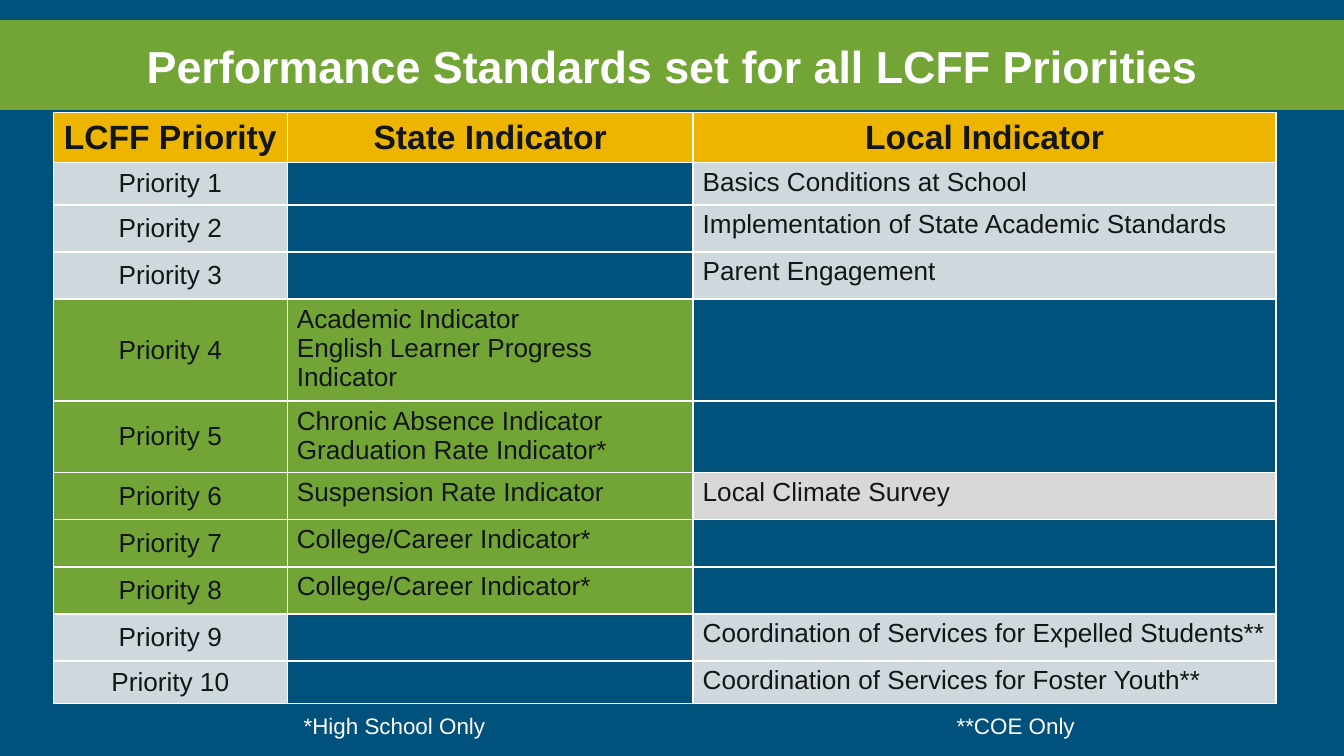
from lxml.etree import SubElement
from pptx import Presentation
from pptx.dml.color import RGBColor
from pptx.enum.text import MSO_ANCHOR as Anchor, PP_ALIGN as Align
from pptx.oxml.ns import qn
from pptx.util import Cm, Pt

NAVY, GREEN, GOLD = "00517C", "72A436", "EEB500"
MIST, GREY, INK, WHITE = "CFD8DC", "D8D8D8", "121618", "FFFFFF"

HEADINGS = ("LCFF Priority", "State Indicator", "Local Indicator")
INDICATORS = [
    ("", "Basics Conditions at School"),
    ("", "Implementation of State Academic Standards"),
    ("", "Parent Engagement"),
    ("Academic Indicator\nEnglish Learner Progress Indicator", ""),
    ("Chronic Absence Indicator\nGraduation Rate Indicator*", ""),
    ("Suspension Rate Indicator", "Local Climate Survey"),
    ("College/Career Indicator*", ""),
    ("College/Career Indicator*", ""),
    ("", "Coordination of Services for Expelled Students**"),
    ("", "Coordination of Services for Foster Youth**"),
]
COLUMN_WIDTHS = (4.42, 7.67, 11.02)
ROW_HEIGHTS = (0.94, 0.79, 0.89, 0.89, 1.93, 1.35, 0.89, 0.89, 0.89, 0.89, 0.79)


def paint(fill, colour):
    """Give a fill one solid colour."""
    fill.solid()
    fill.fore_color.rgb = RGBColor.from_string(colour)


def format_text(frame, size, colour, bold=False, align=Align.LEFT):
    """Format every paragraph and run of a text frame."""
    for paragraph in frame.paragraphs:
        paragraph.alignment = align
        for run in paragraph.runs:
            run.font.name = "Arial"
            run.font.size = Pt(size)
            run.font.bold = bold
            run.font.color.rgb = RGBColor.from_string(colour)


def add_borders(cell, colour):
    """Draw a one-point line on all four sides of a cell."""
    properties = cell._tc.get_or_add_tcPr()
    for side in ("a:lnL", "a:lnR", "a:lnT", "a:lnB"):
        line = SubElement(properties, qn(side), w=str(Pt(1)))
        solid = SubElement(line, qn("a:solidFill"))
        SubElement(solid, qn("a:srgbClr"), val=colour)


def fill_cell(cell, text, colour, size=14, bold=False, centred=False):
    """Write one table cell; a cell without text shows the background."""
    cell.margin_left = cell.margin_right = Cm(0.18)
    cell.margin_top = cell.margin_bottom = Cm(0.1)
    add_borders(cell, WHITE)
    if not text:
        cell.fill.background()
        paragraph = cell.text_frame.paragraphs[0]
        SubElement(paragraph._p, qn("a:endParaRPr"), sz=str(size * 100))
        return
    paint(cell.fill, colour)
    cell.text_frame.text = text
    cell.vertical_anchor = Anchor.MIDDLE if centred else Anchor.TOP
    format_text(cell.text_frame, size, INK, bold,
                Align.CENTER if centred else Align.LEFT)


def add_title_band(slide, left, top, width, height):
    """Turn the title placeholder into the green band."""
    title = slide.shapes.title
    title.left, title.top, title.width, title.height = left, top, width, height
    paint(title.fill, GREEN)
    title.text_frame.text = "Performance Standards set for all LCFF Priorities"
    title.text_frame.vertical_anchor = Anchor.MIDDLE
    format_text(title.text_frame, 24, WHITE, True, Align.CENTER)


def add_priority_table(slide, left, top, width, height):
    """Add the table of state and local indicators by priority."""
    table = slide.shapes.add_table(
        len(ROW_HEIGHTS), len(COLUMN_WIDTHS), left, top, width, height).table
    table.horz_banding = False
    for column, column_width in zip(table.columns, COLUMN_WIDTHS):
        column.width = Cm(column_width)
    for row, row_height in zip(table.rows, ROW_HEIGHTS):
        row.height = Cm(row_height)
    for column, heading in enumerate(HEADINGS):
        fill_cell(table.cell(0, column), heading, GOLD, 18, True, True)
    for number, (state, local) in enumerate(INDICATORS, 1):
        fill_cell(table.cell(number, 0), f"Priority {number}",
                  GREEN if state else MIST, centred=True)
        fill_cell(table.cell(number, 1), state, GREEN)
        fill_cell(table.cell(number, 2), local, GREY if state else MIST)


def add_footnotes(slide, left, top, width, height):
    """Add both footnotes on one line, parted by a tab stop."""
    frame = slide.shapes.add_textbox(left, top, width, height).text_frame
    frame.word_wrap = True
    frame.margin_left = frame.margin_right = 0
    frame.margin_top = frame.margin_bottom = Cm(0.25)
    paragraph = frame.paragraphs[0]
    tabs = SubElement(paragraph._p.get_or_add_pPr(), qn("a:tabLst"))
    SubElement(tabs, qn("a:tab"), pos=str(Cm(12.34)), algn="l")
    paragraph.text = "*High School Only\t**COE Only"
    format_text(frame, 12, WHITE)


def main():
    """Build and save the slide."""
    deck = Presentation()
    deck.slide_width, deck.slide_height = Cm(25.4), Cm(14.29)
    slide = deck.slides.add_slide(deck.slide_layouts[5])
    paint(slide.background.fill, NAVY)
    add_title_band(slide, 0, Cm(0.38), deck.slide_width, Cm(1.7))
    add_priority_table(slide, Cm(1.01), Cm(2.13),
                       Cm(sum(COLUMN_WIDTHS)), Cm(sum(ROW_HEIGHTS)))
    add_footnotes(slide, Cm(5.74), Cm(13.21), Cm(15.8), Cm(0.91))
    deck.save("out.pptx")


if __name__ == "__main__":
    main()
